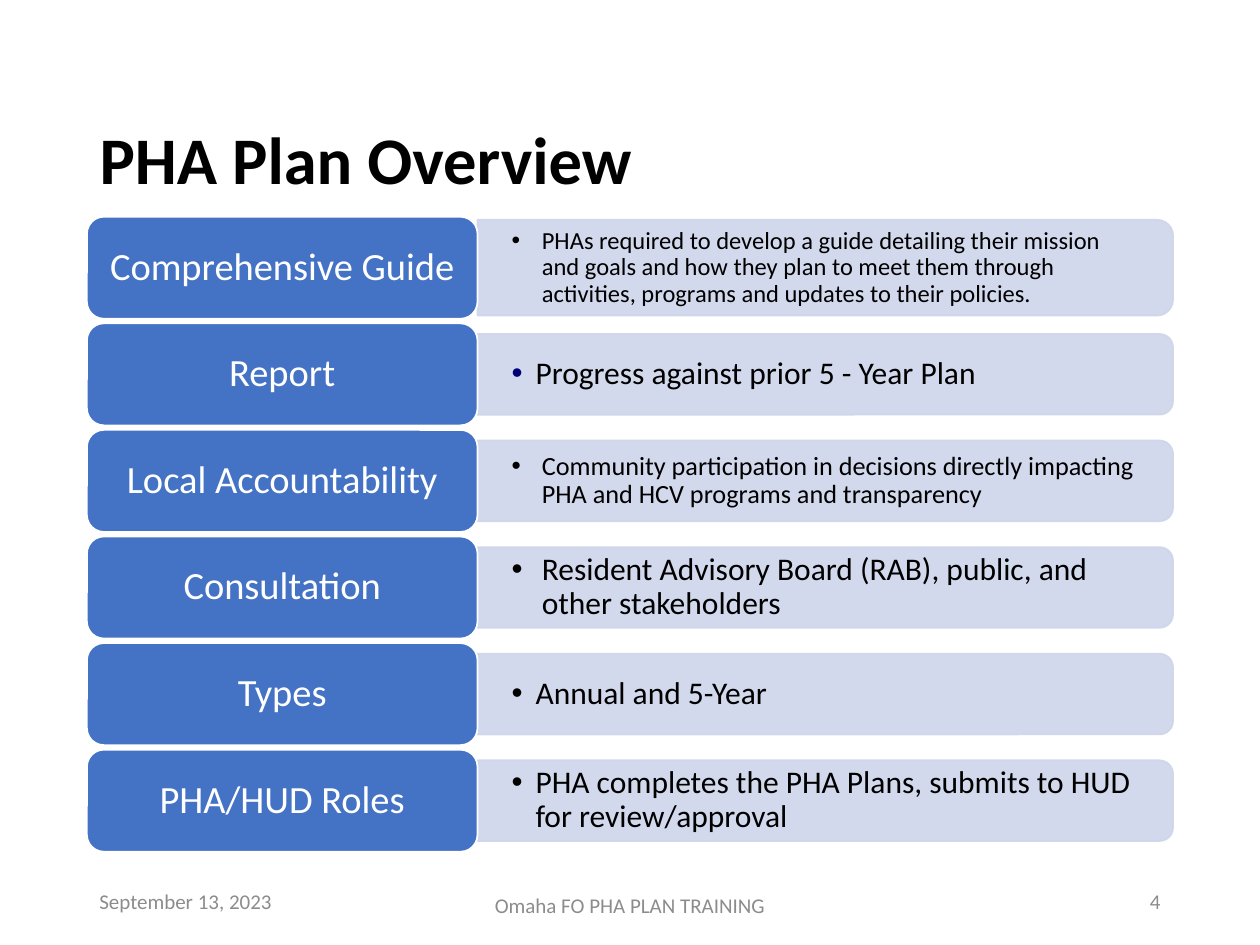
import pptx
import pptx.util
import pptx.dml.color
import pptx.enum.shapes
import pptx.enum.text
import pptx.oxml
import pptx.oxml.ns
from lxml import etree

Inches = pptx.util.Inches
Pt = pptx.util.Pt
SHAPE = pptx.enum.shapes.MSO_SHAPE
ALIGN = pptx.enum.text.PP_ALIGN
qn = pptx.oxml.ns.qn

COLORS = {
    "ink": "000000",
    "white": "FFFFFF",
    "blue": "4472C4",
    "pale": "CFD5EA",
    "navy": "000077",
    "gray": "8C8C8C",
}

# label, detail, detail size, hanging indent, bullet color
ROWS = [
    ("Comprehensive Guide",
     "PHAs required to develop a guide detailing their mission and goals and "
     "how they plan to meet them through activities, programs and updates to "
     "their policies.", 14, 0.24, "ink"),
    ("Report", "Progress against prior 5 - Year Plan", 18, 0.19, "navy"),
    ("Local Accountability",
     "Community participation in decisions directly impacting PHA and HCV "
     "programs and transparency", 15, 0.24, "ink"),
    ("Consultation",
     "Resident Advisory Board (RAB), public, and other stakeholders",
     18, 0.24, "ink"),
    ("Types", "Annual and 5-Year", 18, 0.19, "ink"),
    ("PHA/HUD Roles",
     "PHA completes the PHA Plans, submits to HUD for review/approval",
     18, 0.19, "ink"),
]
LEFT, TOP = 0.69, 1.72
STEP = 4.23 / (len(ROWS) - 1)
LABEL_W, LABEL_H = 3.1, 0.81
PANEL_W = 5.52


def rgb(name):
    return pptx.dml.color.RGBColor.from_string(COLORS[name])


class Deck:
    """Holds the text style and the current slide."""

    font = "Calibri"

    def __init__(self, slide):
        self.slide = slide

    def fill_text(self, frame, text, size, color, align=ALIGN.LEFT,
                  bold=False, inset=(0.1, 0.05), spacing=None):
        frame.word_wrap = True
        frame.auto_size = pptx.enum.text.MSO_AUTO_SIZE.NONE
        frame.vertical_anchor = pptx.enum.text.MSO_ANCHOR.MIDDLE
        frame.margin_left = frame.margin_right = Inches(inset[0])
        frame.margin_top = frame.margin_bottom = Inches(inset[1])
        para = frame.paragraphs[0]
        para.alignment = align
        if spacing:
            para.line_spacing = spacing
        run = para.add_run()
        run.text = text
        run.font.name = self.font
        run.font.size = Pt(size)
        run.font.bold = bold
        run.font.color.rgb = rgb(color)
        return para

    def title(self, text, box):
        hold = self.slide.shapes.title
        hold.left, hold.top, hold.width, hold.height = map(Inches, box)
        self.fill_text(hold.text_frame, text, 38, "ink", bold=True,
                       spacing=0.9)

    def text(self, text, box, size, color, **style):
        area = self.slide.shapes.add_textbox(*map(Inches, box))
        return self.fill_text(area.text_frame, text, size, color, **style)

    def shape(self, kind, box, fill, line):
        item = self.slide.shapes.add_shape(kind, *map(Inches, box))
        item.shadow.inherit = False
        item.fill.solid()
        item.fill.fore_color.rgb = rgb(fill)
        item.line.color.rgb = rgb(line)
        item.line.width = Pt(1)
        return item

    def label(self, text, top):
        item = self.shape(SHAPE.ROUNDED_RECTANGLE,
                          (LEFT, top, LABEL_W, LABEL_H), "blue", "white")
        self.fill_text(item.text_frame, text, 22, "white",
                       align=ALIGN.CENTER, inset=(0.13, 0.09), spacing=0.9)

    def panel(self, mid, height):
        """Draw a pale bar, rounded on its right end only, centered on mid."""
        center = LEFT + LABEL_W + PANEL_W / 2
        box = (center - height / 2, mid - PANEL_W / 2, height, PANEL_W)
        item = self.shape(SHAPE.ROUND_2_SAME_RECTANGLE, box, "pale", "pale")
        item.rotation = 90
        for tint in item._element.spPr.iter(qn("a:srgbClr")):
            etree.SubElement(tint, qn("a:alpha"), val="90000")

    def bullet(self, text, mid, height, size, indent, dot):
        box = (LEFT + LABEL_W, mid - height / 2, 5.49, height)
        para = self.text(text, box, size, "ink", inset=(0.27, 0.14),
                         spacing=0.9)
        props = para._p.get_or_add_pPr()
        props.set("marL", str(Inches(indent)))
        props.set("indent", str(-Inches(indent)))
        tint = etree.SubElement(props, qn("a:buClr"))
        etree.SubElement(tint, qn("a:srgbClr"), val=COLORS[dot])
        etree.SubElement(props, qn("a:buFont"), typeface="Arial")
        etree.SubElement(props, qn("a:buChar"), char="•")


def main():
    show = pptx.Presentation()
    show.slide_width, show.slide_height = Inches(10), Inches(7.5)
    deck = Deck(show.slides.add_slide(show.slide_layouts[5]))
    deck.title("PHA Plan Overview", (LEFT, 0.74, 8.62, 1.1))

    for i, (name, detail, size, indent, dot) in enumerate(ROWS):
        top = TOP + i * STEP
        mid = top + LABEL_H / 2
        height = 0.76 if i == 0 else 0.64
        deck.panel(mid, height)
        deck.bullet(detail, mid, height - 0.06, size, indent, dot)
        deck.label(name, top)

    deck.text("September 13, 2023", (LEFT, 6.95, 2.25, 0.4), 12, "gray")
    deck.text("Omaha FO PHA PLAN TRAINING", (3.32, 7.01, 3.36, 0.34), 12,
              "gray", align=ALIGN.CENTER)
    deck.text("4", (7.06, 6.95, 2.25, 0.4), 12, "gray", align=ALIGN.RIGHT)
    show.save("out.pptx")


if __name__ == "__main__":
    main()
